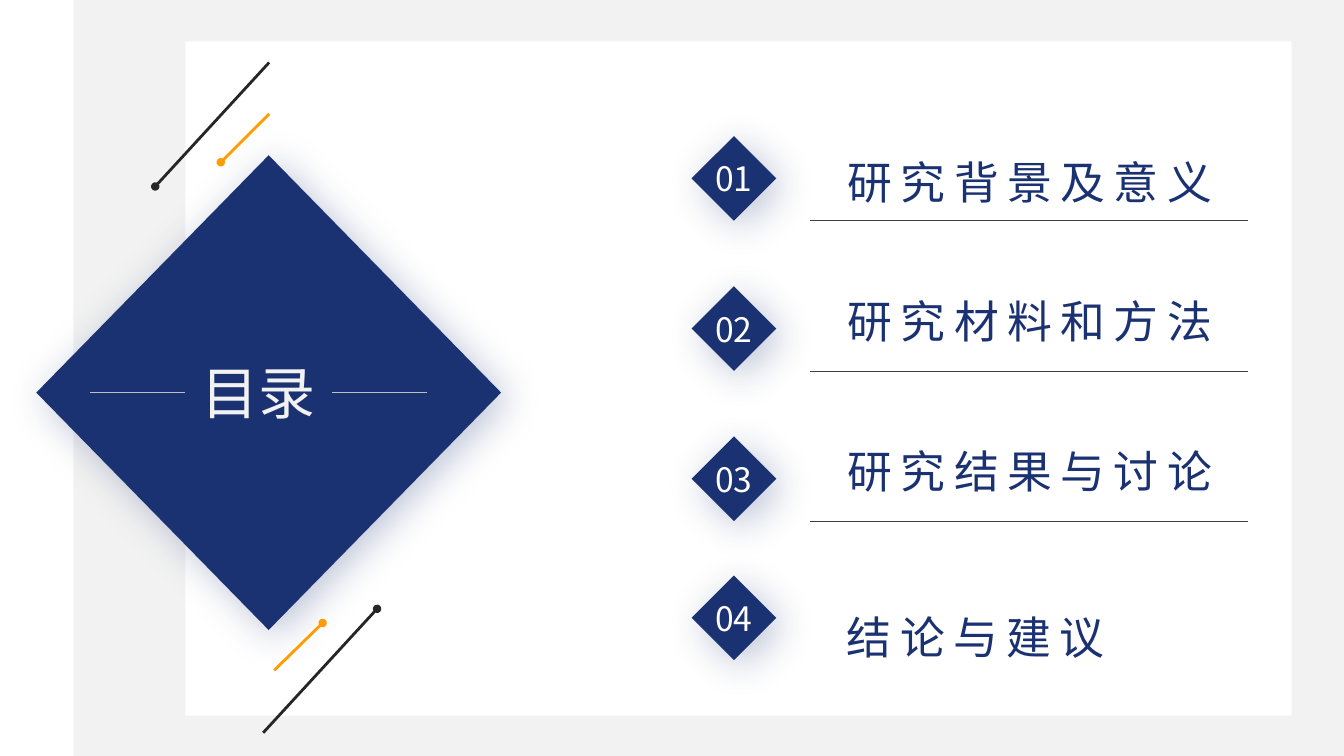
from lxml import etree
from pptx import Presentation
from pptx.dml.color import RGBColor
from pptx.enum import shapes, text
from pptx.oxml import parse_xml
from pptx.oxml.ns import qn
from pptx.util import Inches, Pt

NAVY, GREY, WHITE = "1A3172", "F2F2F2", "FFFFFF"
DARK, GOLD = "262626", "FF9C00"
CJK = "Noto Sans CJK JP"
GLOW = ('<a:outerShdw xmlns:a="http://schemas.openxmlformats.org/drawingml/2006/main" '
        'blurRad="355600" dist="88900" dir="2700000" algn="tl" rotWithShape="0">'
        f'<a:srgbClr val="{NAVY}"><a:alpha val="27000"/></a:srgbClr></a:outerShdw>')


def paint(fill, color):
    fill.solid()
    fill.fore_color.rgb = RGBColor.from_string(color)


def write(shape, words, size, color, font=CJK, align="CENTER", anchor="MIDDLE",
          wrap=False, space=0, lead=1, indent=0):
    frame = shape.text_frame
    frame.word_wrap = wrap
    frame.auto_size = text.MSO_AUTO_SIZE.NONE
    frame.vertical_anchor = text.MSO_ANCHOR[anchor]
    para = frame.paragraphs[0]
    para.alignment = text.PP_ALIGN[align]
    para.line_spacing = lead
    if indent:
        para._p.get_or_add_pPr().set("marL", str(Inches(indent)))
    run = para.add_run()
    run.text = words
    run.font.size = Pt(size)
    run.font.name = font
    paint(run.font.fill, color)
    props = run.font._element
    props.set("lang", "zh-CN")
    props.set("spc", str(space * 100))
    etree.SubElement(props, qn("a:ea")).set("typeface", CJK)


deck = Presentation()
deck.slide_width, deck.slide_height = Inches(13.33), Inches(7.5)
slide = deck.slides.add_slide(deck.slide_layouts[5])
paint(slide.background.fill, GREY)

# Contents: number, heading, diamond top, heading top, alignment, line spacing
rows = [
    ("01", "研究背景及意义", 1.35, 1.22, "CENTER", 1.5),
    ("02", "研究材料和方法", 2.84, 2.86, "CENTER", 1),
    ("03", "研究结果与讨论", 4.33, 4.35, "CENTER", 1),
    ("04", "结论与建议", 5.71, 5.73, "LEFT", 1.5),
]

# Panels and diamonds
forms = [
    ("RECTANGLE", 0, 0, 0.73, 7.5, WHITE, ""),
    ("RECTANGLE", 0.73, 0, 12.6, 7.5, GREY, ""),
    ("RECTANGLE", 1.84, 0.41, 10.97, 6.69, WHITE, ""),
    ("DIAMOND", 0.36, 1.54, 4.61, 4.71, NAVY, ""),
]
forms += [("DIAMOND", 6.86, row[2], 0.84, 0.84, NAVY, row[0]) for row in rows]
for kind, x, y, w, h, color, label in forms:
    form = slide.shapes.add_shape(shapes.MSO_SHAPE[kind], Inches(x), Inches(y),
                                  Inches(w), Inches(h))
    paint(form.fill, color)
    form.line.fill.background()
    form.shadow.inherit = False
    if kind == "DIAMOND":
        form._element.spPr.find(qn("a:effectLst")).append(parse_xml(GLOW))
    if label:
        write(form, label, 24, WHITE)

# Headings
for label, words, top, y, align, lead in rows:
    box = slide.shapes.add_textbox(Inches(7.96), Inches(y), Inches(4.51), Inches(0.82))
    write(box, words, 32, NAVY, align=align, anchor="TOP", wrap=True, space=6,
          lead=lead, indent=0.34 if align == "LEFT" else 0)

# Title, in front of the large diamond
title = slide.shapes.title
title.left, title.top = Inches(1.84), Inches(3.54)
title.width, title.height = Inches(1.45), Inches(0.7)
write(title, "目录", 40.7, GREY, font="Arial")
slide.shapes._spTree.append(title._element)

# Lines: start, end, colour, width, dotted end, title side to join
lines = [
    (1.84, 3.89, 0.89, 3.89, "BFBFBF", 0.5, None, 1),
    (3.29, 3.89, 4.24, 3.89, "BFBFBF", 0.5, None, 3),
    (2.67, 0.62, 1.54, 1.85, DARK, 2, "tailEnd", None),
    (2.67, 1.13, 2.19, 1.61, GOLD, 2, "tailEnd", None),
    (3.74, 6.04, 2.61, 7.27, DARK, 2, "headEnd", None),
    (3.2, 6.18, 2.72, 6.65, GOLD, 2, "headEnd", None),
]
lines += [(8.03, row[2] + 0.84, 12.38, row[2] + 0.84, "404040", 0.5, None, None)
          for row in rows[:3]]
for x1, y1, x2, y2, color, width, dot, side in lines:
    line = slide.shapes.add_connector(shapes.MSO_CONNECTOR.STRAIGHT, Inches(x1),
                                      Inches(y1), Inches(x2), Inches(y2))
    if side:
        line.begin_connect(title, side)
    paint(line.line.fill, color)
    line.line.width = Pt(width)
    if dot:
        etree.SubElement(line.line._get_or_add_ln(), qn(f"a:{dot}")).set("type", "oval")
    etree.SubElement(line._element.spPr, qn("a:effectLst"))

deck.save("out.pptx")
